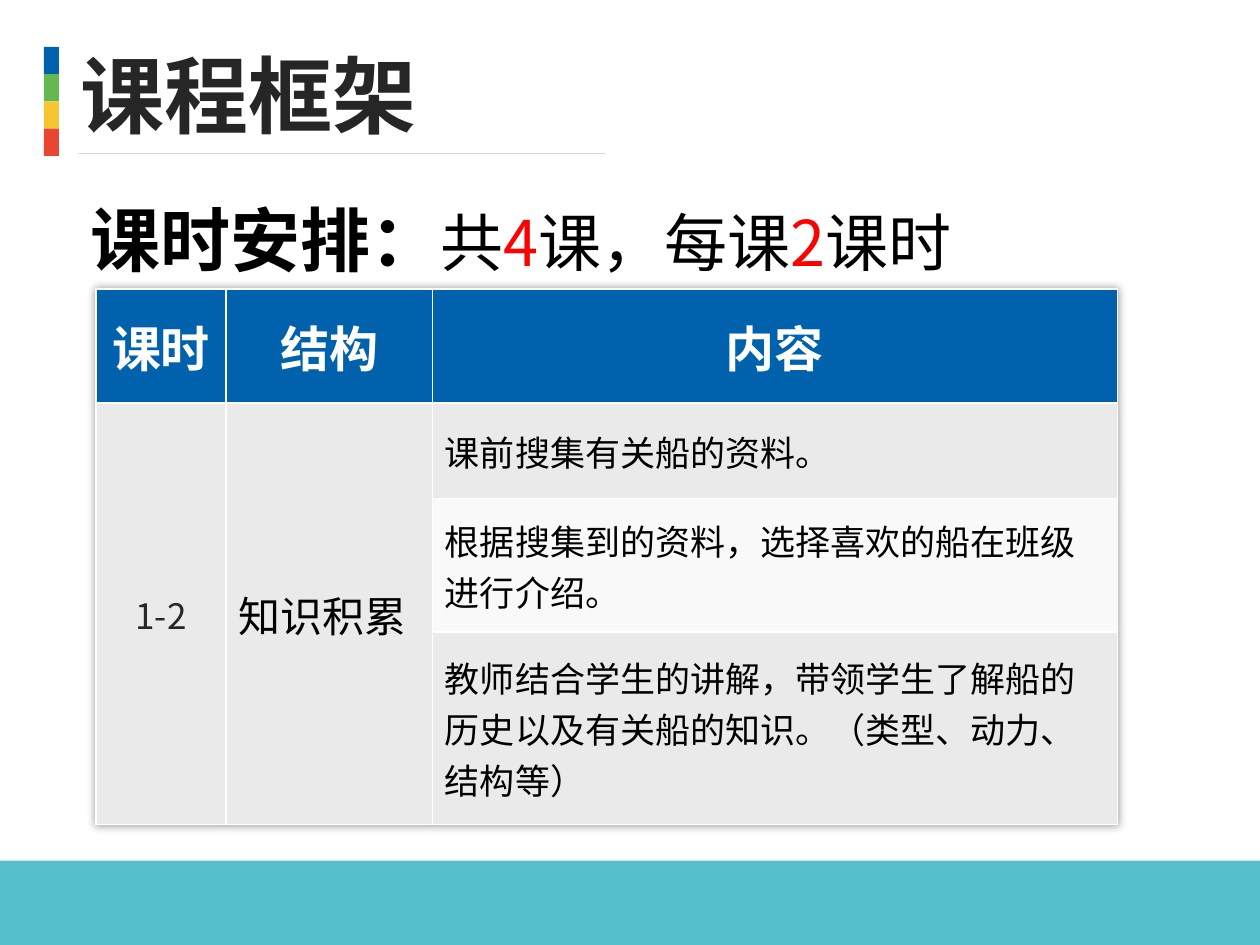
from lxml.etree import SubElement
from pptx import Presentation
from pptx.dml.color import RGBColor
from pptx.enum.shapes import MSO_CONNECTOR as Connector, MSO_SHAPE as Shape
from pptx.enum.text import MSO_ANCHOR as Anchor, PP_ALIGN as Align
from pptx.oxml import parse_xml
from pptx.oxml.ns import nsdecls, qn
from pptx.util import Pt

COLORS = {
    "blue": "0062AC", "green": "64B852", "yellow": "F5C632", "red": "E84633",
    "teal": "55C0CC", "rule": "D8D8D8", "ink": "262626", "black": "000000",
    "accent": "FF0000", "white": "FFFFFF", "band": "EAEAEA", "light": "F9F9F9",
}
SANS = "Noto Sans CJK SC"
HEADINGS = ["课时", "结构", "内容"]
CONTENTS = [
    "课前搜集有关船的资料。",
    "根据搜集到的资料，选择喜欢的船在班级进行介绍。",
    "教师结合学生的讲解，带领学生了解船的历史以及有关船的知识。（类型、动力、结构等）",
]
COLUMN_WIDTHS = [74.2, 118, 391.4]
ROW_HEIGHTS = [65.3, 54.7, 76.2, 110]


def color(name):
    """Return the named colour."""
    return RGBColor.from_string(COLORS[name])


def add_span(para, text, size, tint, bold=False, face=SANS):
    """Add a run with the same face for Latin and East Asian text."""
    span = para.add_run()
    span.text = text
    font = span.font
    font.size, font.bold, font.name = Pt(size), bold, face
    font.color.rgb = color(tint)
    SubElement(font._element, qn("a:ea"), typeface=face)


def add_text(page, left, top, width, height, spans):
    """Add a one-paragraph text box centred vertically."""
    box = page.shapes.add_textbox(Pt(left), Pt(top), Pt(width), Pt(height))
    frame = box.text_frame
    frame.word_wrap = True
    frame.vertical_anchor = Anchor.MIDDLE
    for span in spans:
        add_span(frame.paragraphs[0], *span)


def add_block(page, left, top, width, height, tint):
    """Add a plain filled rectangle."""
    block = page.shapes.add_shape(
        Shape.RECTANGLE, Pt(left), Pt(top), Pt(width), Pt(height))
    block.shadow.inherit = False
    block.fill.solid()
    block.fill.fore_color.rgb = color(tint)
    block.line.fill.background()


def add_rule(page, left, right, top):
    """Add the thin horizontal line under the title."""
    rule = page.shapes.add_connector(
        Connector.STRAIGHT, Pt(left), Pt(top), Pt(right), Pt(top))
    rule.line.color.rgb = color("rule")
    rule.line.width = Pt(0.75)
    SubElement(rule._element.spPr, qn("a:effectLst"))


def style_cell(cell, tint):
    """Fill a cell, centre it vertically and give it white borders."""
    cell.vertical_anchor = Anchor.MIDDLE
    properties = cell._tc.get_or_add_tcPr()
    for edge in ("a:lnL", "a:lnR", "a:lnT", "a:lnB"):
        border = SubElement(properties, qn(edge), w=str(Pt(1)))
        fill = SubElement(border, qn("a:solidFill"))
        SubElement(fill, qn("a:srgbClr"), val=COLORS["white"])
    cell.fill.solid()
    cell.fill.fore_color.rgb = color(tint)


def write_cell(cell, text, size, tint, bold=False, align=Align.LEFT):
    """Write one paragraph into a cell."""
    para = cell.text_frame.paragraphs[0]
    para.alignment = align
    add_span(para, text, size, tint, bold)


def add_table_shadow(table):
    """Give the whole table a soft grey shadow."""
    table._tbl.tblPr.insert(0, parse_xml(
        f'<a:effectLst {nsdecls("a")}><a:outerShdw blurRad="{Pt(5)}" '
        'algn="ctr" rotWithShape="0"><a:srgbClr val="000000">'
        '<a:alpha val="40000"/></a:srgbClr></a:outerShdw></a:effectLst>'))


def add_schedule(page):
    """Add the lesson table with its merged left columns."""
    table = page.shapes.add_table(
        len(ROW_HEIGHTS), len(COLUMN_WIDTHS), Pt(54.9), Pt(165),
        Pt(sum(COLUMN_WIDTHS)), Pt(sum(ROW_HEIGHTS))).table
    for column, width in zip(table.columns, COLUMN_WIDTHS):
        column.width = Pt(width)
    for number, height in enumerate(ROW_HEIGHTS):
        table.rows[number].height = Pt(height)
        for index in range(len(COLUMN_WIDTHS)):
            tint = "light" if (number, index) == (2, 2) else "band"
            style_cell(table.cell(number, index), tint if number else "blue")
    for index, heading in enumerate(HEADINGS):
        write_cell(table.cell(0, index), heading, 28, "white", True, Align.CENTER)
    for index in (0, 1):
        table.cell(1, index).merge(table.cell(3, index))
    write_cell(table.cell(1, 0), "1-2", 20, "ink", align=Align.CENTER)
    write_cell(table.cell(1, 1), "知识积累", 24, "black")
    for number, content in enumerate(CONTENTS, 1):
        write_cell(table.cell(number, 2), content, 20, "black")
    add_table_shadow(table)


def main():
    """Build the course outline slide."""
    deck = Presentation()
    deck.slide_width, deck.slide_height = Pt(720), Pt(540)
    page = deck.slides.add_slide(deck.slide_layouts[6])
    add_text(page, 38.9, 20.9, 383.8, 65.5,
             [("课程框架", 48, "ink", True, "Roboto Condensed")])
    add_rule(page, 44.6, 345.6, 87.8)
    for index, tint in enumerate(("blue", "green", "yellow", "red")):
        add_block(page, 25.1, 26.8 + 15.6 * index, 8.6, 15.6, tint)
    add_block(page, 0, 491.8, 720, 48.2, "teal")
    add_text(page, 44.6, 108.7, 608.4, 55.4, [
        ("课时安排：", 40, "black", True),
        ("共", 36, "black"), ("4", 36, "accent"), ("课，每课", 36, "black"),
        ("2", 36, "accent"), ("课时", 36, "black")])
    add_schedule(page)
    deck.save("out.pptx")


if __name__ == "__main__":
    main()
